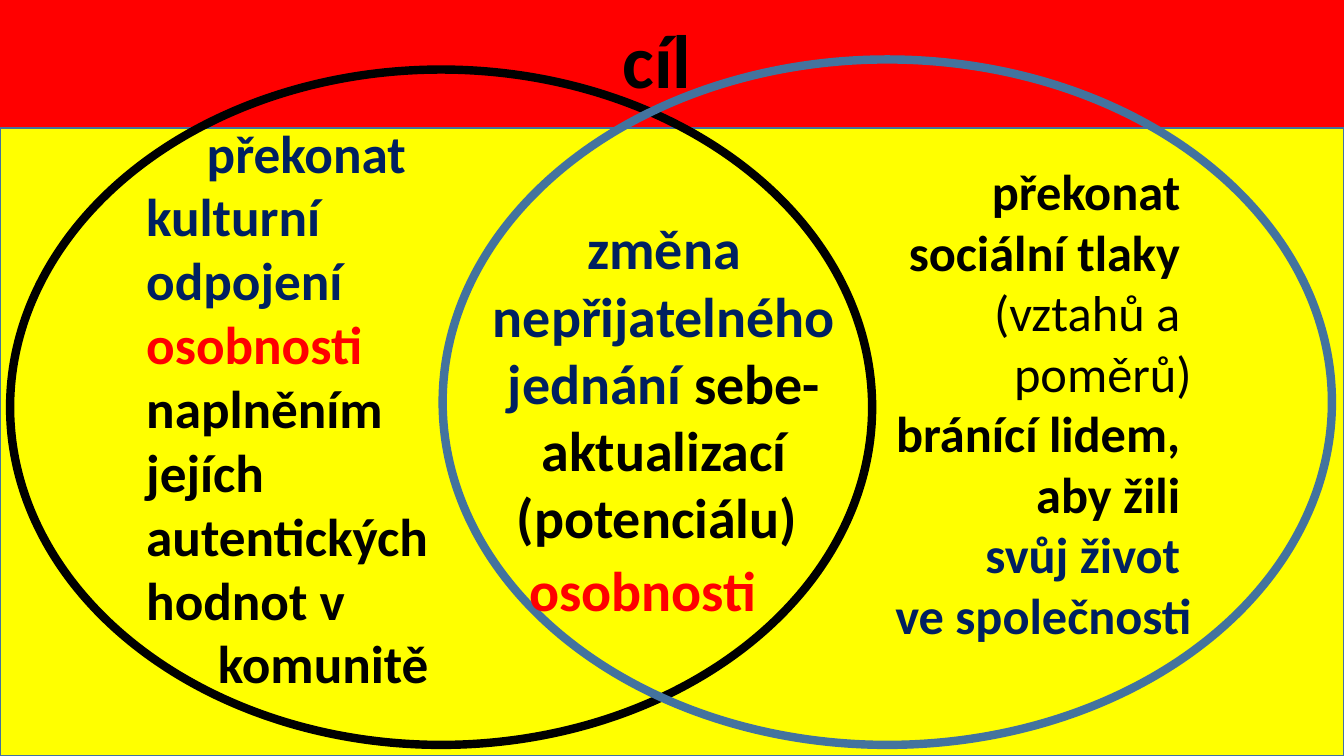
import pptx
import pptx.util
import pptx.dml.color
import pptx.enum.shapes
import pptx.enum.text

Inches = pptx.util.Inches
Pt = pptx.util.Pt
RGBColor = pptx.dml.color.RGBColor
Align = pptx.enum.text.PP_ALIGN
Shape = pptx.enum.shapes.MSO_SHAPE

RED = RGBColor(0xFF, 0x00, 0x00)
YELLOW = RGBColor(0xFF, 0xFF, 0x00)
BLACK = RGBColor(0x00, 0x00, 0x00)
NAVY = RGBColor(0x00, 0x20, 0x60)
STEEL = RGBColor(0x43, 0x73, 0x9E)

WIDTH, HEIGHT, BAND = 13.33, 7.5, 1.27

# Each paragraph is a list of runs: (text, colour, bold)
TITLE = [[("cíl", BLACK, True)]]
CULTURE = [
    [("překonat", NAVY, True)],
    [("kulturní", NAVY, True)],
    [("odpojení", NAVY, True)],
    [("osobnosti", RED, True)],
    [("naplněním", BLACK, True)],
    [("jejích", BLACK, True)],
    [("autentických", BLACK, True)],
    [("hodnot v", BLACK, True)],
    [("komunitě", BLACK, True)],
]
SOCIETY = [
    [("překonat ", BLACK, True)],
    [("sociální tlaky ", BLACK, True)],
    [("(vztahů a ", BLACK, False)],
    [("poměrů)", BLACK, False)],
    [("bránící lidem, ", BLACK, True)],
    [("aby žili ", BLACK, True)],
    [("svůj život ", NAVY, True)],
    [("ve společnosti", NAVY, True)],
]
CHANGE = [
    [("změna nepřijatelného jednání", NAVY, True), (" sebe-aktualizací", BLACK, True)],
    [("(potenciálu)", BLACK, True)],
    [("osobnosti", RED, True)],
]


def write(shape, paragraphs, size, alignment):
    frame = shape.text_frame
    frame.word_wrap = True
    frame.auto_size = pptx.enum.text.MSO_AUTO_SIZE.NONE
    frame.vertical_anchor = pptx.enum.text.MSO_ANCHOR.MIDDLE
    for index, runs in enumerate(paragraphs):
        paragraph = frame.paragraphs[0] if index == 0 else frame.add_paragraph()
        paragraph.alignment = alignment
        for text, colour, bold in runs:
            run = paragraph.add_run()
            run.text = text
            run.font.name = "Calibri"
            run.font.size = Pt(size)
            run.font.bold = bold
            run.font.color.rgb = colour
    return frame.paragraphs


def indent(paragraph, side, inches):
    """Set the margin of a paragraph; side is marL or marR."""
    paragraph._p.get_or_add_pPr().set(side, str(Inches(inches)))


def add_outlined(slide, preset, box, line_colour, line_width, fill=None):
    shape = slide.shapes.add_shape(preset, *map(Inches, box))
    shape.shadow.inherit = False
    if fill is None:
        shape.fill.background()
    else:
        shape.fill.solid()
        shape.fill.fore_color.rgb = fill
    shape.line.color.rgb = line_colour
    shape.line.width = Pt(line_width)
    return shape


def main():
    presentation = pptx.Presentation()
    presentation.slide_width = Inches(WIDTH)
    presentation.slide_height = Inches(HEIGHT)
    slide = presentation.slides.add_slide(presentation.slide_layouts[5])

    title = slide.shapes.title
    title.left, title.top = Inches(0), Inches(-0.01)
    title.width, title.height = Inches(WIDTH), Inches(BAND + 0.01)
    title.fill.solid()
    title.fill.fore_color.rgb = RED
    heading = write(title, TITLE, 54, Align.CENTER)[0]
    heading.line_spacing = 0.9
    indent(heading, "marR", 0.3)

    add_outlined(slide, Shape.RECTANGLE, (0, BAND, WIDTH, HEIGHT - BAND), STEEL, 1, YELLOW)

    culture = add_outlined(slide, Shape.OVAL, (0.1, 0.69, 8.55, 6.7), BLACK, 6)
    lines = write(culture, CULTURE, 38, Align.LEFT)
    indent(lines[0], "marL", 0.6)
    indent(lines[-1], "marL", 0.71)

    society = add_outlined(slide, Shape.OVAL, (4.39, 0.59, 8.82, 6.8), STEEL, 6)
    write(society, SOCIETY, 36, Align.RIGHT)

    change = slide.shapes.add_textbox(*map(Inches, (4.39, BAND, 4.39, 5.76)))
    lines = write(change, CHANGE, 40, Align.CENTER)
    indent(lines[1], "marR", 0.14)
    indent(lines[2], "marR", 0.42)
    lines[2].space_before = Pt(4)

    presentation.save("out.pptx")


if __name__ == "__main__":
    main()
